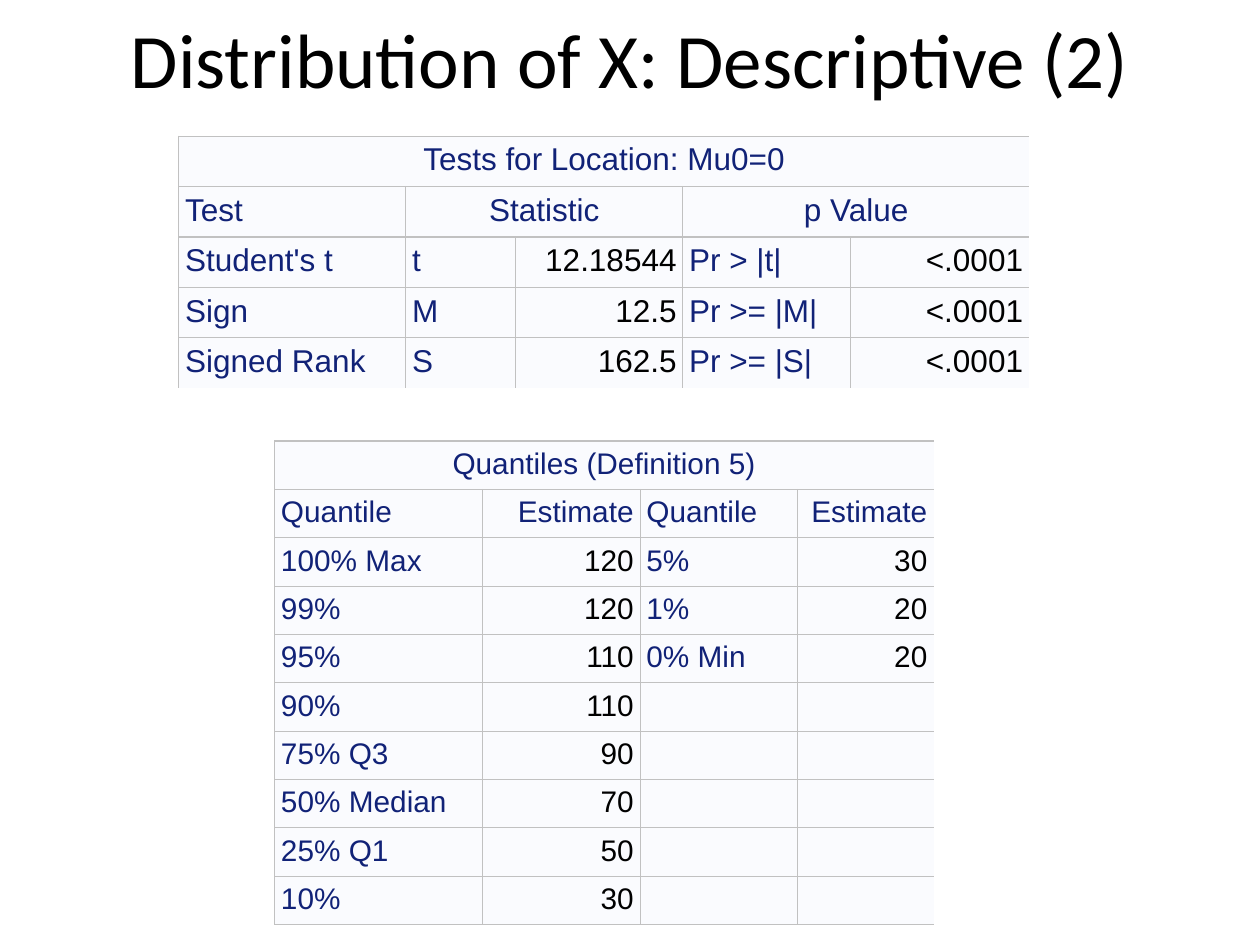
from dataclasses import dataclass

from lxml import etree
from pptx import Presentation
from pptx.dml.color import RGBColor
from pptx.enum import text
from pptx.oxml import ns
from pptx.util import Inches, Pt


@dataclass(frozen=True)
class Theme:
    black: str = "000000"
    label: str = "112277"
    cell: str = "FAFBFE"
    border: str = "C1C1C1"
    border_width: float = 0.75
    title_font: str = "Calibri"
    table_font: str = "Arial"
    title_size: int = 44
    tests_size: int = 18
    quantiles_size: int = 17
    inset: float = 0.05


THEME = Theme()
ALIGN = {"l": text.PP_ALIGN.LEFT, "c": text.PP_ALIGN.CENTER, "r": text.PP_ALIGN.RIGHT}
HEADER_ROWS = 2

# None continues the cell on its left; "" is an empty cell
TESTS = [
    ["Tests for Location: Mu0=0", None, None, None, None],
    ["Test", "Statistic", None, "p Value", None],
    ["Student's t", "t", "12.18544", "Pr > |t|", "<.0001"],
    ["Sign", "M", "12.5", "Pr >= |M|", "<.0001"],
    ["Signed Rank", "S", "162.5", "Pr >= |S|", "<.0001"],
]
QUANTILES = [
    ["Quantiles (Definition 5)", None, None, None],
    ["Quantile", "Estimate", "Quantile", "Estimate"],
    ["100% Max", "120", "5%", "30"],
    ["99%", "120", "1%", "20"],
    ["95%", "110", "0% Min", "20"],
    ["90%", "110", "", ""],
    ["75% Q3", "90", "", ""],
    ["50% Median", "70", "", ""],
    ["25% Q1", "50", "", ""],
    ["10%", "30", "", ""],
]


def add_run(paragraph, words, font, size, color, align):
    paragraph.alignment = ALIGN[align]
    run = paragraph.add_run()
    run.text = words
    run.font.name = font
    run.font.size = Pt(size)
    run.font.color.rgb = RGBColor.from_string(color)


def set_borders(cell, hidden):
    """Draw the four edges of a cell, except those in hidden."""
    properties = cell._tc.get_or_add_tcPr()
    for edge in "LRTB":
        line = etree.SubElement(properties, ns.qn(f"a:ln{edge}"),
                                w=str(Pt(THEME.border_width)))
        if edge in hidden:
            etree.SubElement(line, ns.qn("a:noFill"))
        else:
            fill = etree.SubElement(line, ns.qn("a:solidFill"))
            etree.SubElement(fill, ns.qn("a:srgbClr"), val=THEME.border)


def add_title(slide, box, words):
    title = slide.shapes.add_textbox(*map(Inches, box)).text_frame
    title.word_wrap = True
    title.vertical_anchor = text.MSO_ANCHOR.MIDDLE
    add_run(title.paragraphs[0], words, THEME.title_font, THEME.title_size,
            THEME.black, "c")


def add_statistics(slide, box, rows, widths, aligns, size, open_bottom=False):
    """Place a table with an open right side; aligns has a letter per column."""
    table = slide.shapes.add_table(len(rows), len(widths), *map(Inches, box)).table
    table.first_row = table.horz_banding = False
    for column, width in zip(table.columns, widths):
        column.width = Inches(width)

    for r, row in enumerate(rows):
        for c, words in enumerate(row):
            cell = table.cell(r, c)
            end = c
            while end + 1 < len(row) and row[end + 1] is None:
                end += 1

            # Edges and fill
            hidden = "R" if end == len(row) - 1 else ""
            if open_bottom and r == len(rows) - 1:
                hidden += "B"
            set_borders(cell, hidden)
            cell.fill.solid()
            cell.fill.fore_color.rgb = RGBColor.from_string(THEME.cell)
            cell.margin_left = cell.margin_right = Inches(THEME.inset)
            cell.margin_top = cell.margin_bottom = Inches(THEME.inset if words else 0)

            # Wording
            if words:
                if end > c:
                    cell.merge(table.cell(r, end))
                align = "c" if end > c else aligns[c]
                is_value = r >= HEADER_ROWS and align == "r"
                add_run(cell.text_frame.paragraphs[0], words, THEME.table_font, size,
                        THEME.black if is_value else THEME.label, align)


def main():
    deck = Presentation()
    deck.slide_width, deck.slide_height = Inches(10), Inches(7.5)
    slide = deck.slides.add_slide(deck.slide_layouts[6])
    add_title(slide, (0.5, 0, 9, 0.92), "Distribution of X: Descriptive (2)")
    add_statistics(slide, (1.42, 1.08, 6.75, 1.93), TESTS,
                   (1.8, 0.87, 1.33, 1.33, 1.42), "llrlr", THEME.tests_size,
                   open_bottom=True)
    add_statistics(slide, (2.18, 3.5, 5.23, 3.81), QUANTILES,
                   (1.65, 1.25, 1.25, 1.08), "lrlr", THEME.quantiles_size)
    deck.save("out.pptx")


if __name__ == "__main__":
    main()
